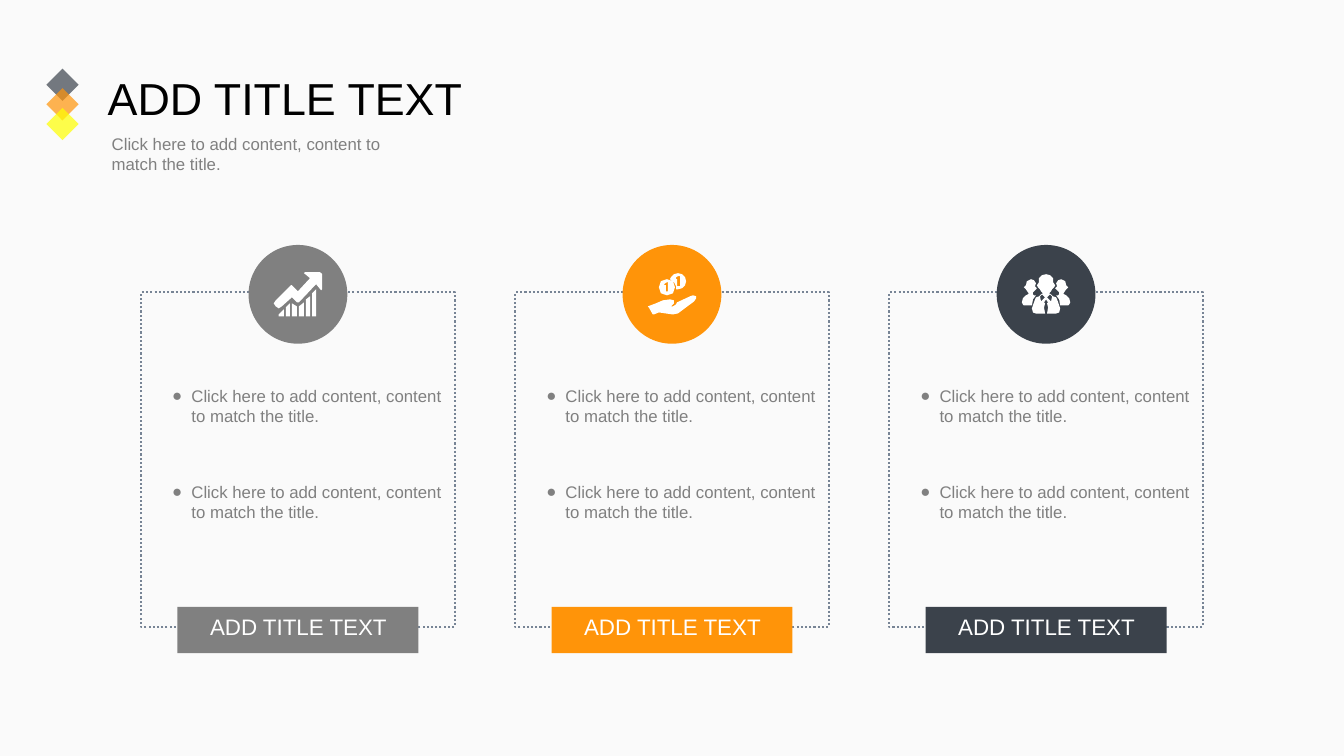
from lxml import etree
from pptx import Presentation
from pptx.dml.color import RGBColor
from pptx.enum.dml import MSO_LINE_DASH_STYLE as Dash
from pptx.enum.shapes import MSO_SHAPE as Preset
from pptx.enum.text import MSO_AUTO_SIZE as AutoSize, PP_ALIGN as Align
from pptx.oxml.ns import qn
from pptx.util import Inches, Pt

COLORS = {"background": "FAFAFA", "gray": "808080", "orange": "FF9409", "slate": "3B424B",
          "yellow": "FFFF00", "border": "778495", "white": "FFFFFF", "black": "000000"}

# Content
TITLE = "ADD TITLE TEXT"
BODY = "Click here to add content, content to match the title."
DIAMONDS = ["slate", "orange", "yellow"]
FORMATS = {
    "title": {"size": Pt(32), "color": "black"},
    "body": {"size": Pt(12), "color": "gray"},
    "label": {"size": Pt(16), "color": "white"},
}


def mirror(points):
    return [(-x, y) for x, y in points]


# Icon outlines, in hundredths of an inch from the centre of their circle
GROWTH = [
    [(-19, 22), (-19, 20), (-14, 15), (-14, 22)],
    [(-12, 22), (-12, 13), (-8, 9), (-8, 22)],
    [(-6, 22), (-6, 9), (-1, 12), (-1, 22)],
    [(1, 22), (1, 12), (6, 8), (6, 22)],
    [(8, 22), (8, 5), (12, 1.5), (12, 22)],
    [(14, 22), (14, -1), (18, -5), (18, 22)],
    [(7, -22), (22, -22), (24.5, -20), (24.5, -5), (23, -4), (18, -10), (1, 8), (-1, 8),
     (-6, 3), (-16, 12), (-19, 13.5), (-22, 12), (-24, 9), (-22, 6), (-7, -9), (-6, -9),
     (0, -3), (12, -16), (6, -21)],
]
COINS = [
    [(21, 1), (24, 2), (24.5, 4.5), (22, 7), (6, 19), (1, 20.5), (-13, 18), (-18, 20),
     (-19, 20), (-23, 13), (-24, 12), (-16, 9), (-9, 5.5), (-2, 5), (2, 6), (2, 9),
     (-1, 11.5), (-5, 12), (1, 12), (4, 10), (5, 8), (18, 2)],
    [(-5, -15), (-2, -14.4), (0.7, -12.7), (2.4, -10), (3, -7), (2.4, -4), (0.7, -1.3),
     (-2, 0.4), (-5, 1), (-8, 0.4), (-10.7, -1.3), (-12.4, -4), (-13, -7), (-12.4, -10),
     (-10.7, -12.7), (-8, -14.4)],
    [(-5, -12), (-8, -10), (-7, -9), (-6, -9), (-6, -3), (-4, -3), (-4, -12)],
    [(4, -5), (6, -5), (10, -6), (13, -9), (14, -13), (13, -17), (10, -20), (6, -21),
     (2, -20), (-1, -17), (-2, -15), (2, -12), (4, -8)],
    [(6, -18), (4, -17), (4, -15), (5, -15), (5, -8), (8, -8), (8, -18)],
]
COLLEAGUE = [(15, -15), (19, -13), (20, -9), (21.5, -7), (20, -5), (18, -2), (17, -1), (18, 0),
             (20, 1), (23, 4), (24, 8), (23, 10), (22, 11), (14, 11), (13, 5), (10, 1),
             (12, 1), (13, 0), (13, -2), (10, -5), (9, -6), (11, -8), (10, -11), (12, -14)]
LEADER_HALF = [(0, -20), (4, -19), (7, -16), (7, -12), (9, -9), (8, -7), (6, -5), (5, -3),
               (3, -1), (5, 0), (7, 2), (10, 3), (11, 5), (14, 14), (13, 18), (10, 19),
               (1, 19), (2, 13), (1, 9), (2, 8), (0, 5)]
COLLAR = [(4, 0), (1, 3), (5, 7), (6, 2)]
TEAM = [COLLEAGUE, mirror(COLLEAGUE), LEADER_HALF + mirror(LEADER_HALF)[::-1],
        COLLAR, mirror(COLLAR)]

CARDS = [("gray", GROWTH), ("orange", COINS), ("slate", TEAM)]

# Layout
CARD_LEFT, CARD_TOP, CARD_STEP = 1.4, 2.9, 3.71
CARD_WIDTH, CARD_HEIGHT = 3.11, 3.32
CIRCLE_SIZE, CIRCLE_MIDDLE = 0.98, 2.92
BULLET_TOPS = [3.78, 4.73]


def rgb(name):
    return RGBColor.from_string(COLORS[name])


def paint(shape, fill, alpha=None):
    shape.shadow.inherit = False
    shape.line.fill.background()
    shape.fill.solid()
    shape.fill.fore_color.rgb = rgb(fill)
    if alpha:
        color = shape.fill._xPr.find(qn("a:solidFill"))[0]
        etree.SubElement(color, qn("a:alpha"), val=str(alpha * 1000))


def add_filled(shapes, preset, box, fill, alpha=None):
    shape = shapes.add_shape(preset, *map(Inches, box))
    paint(shape, fill, alpha)


def add_text(shapes, box, text, style, align=Align.LEFT, bullet=False):
    frame = shapes.add_textbox(*map(Inches, box)).text_frame
    frame.word_wrap = True
    frame.auto_size = AutoSize.SHAPE_TO_FIT_TEXT
    paragraph = frame.paragraphs[0]
    paragraph.alignment = align
    run = paragraph.add_run()
    run.text = text
    run.font.name = "Arial"
    for key, value in FORMATS[style].items():
        if key == "color":
            run.font.color.rgb = rgb(value)
        else:
            setattr(run.font, key, value)
    if bullet:
        properties = paragraph._p.get_or_add_pPr()
        properties.set("marL", str(Inches(0.19)))
        properties.set("indent", str(-Inches(0.19)))
        etree.SubElement(properties, qn("a:buFont"), typeface="Arial")
        etree.SubElement(properties, qn("a:buChar"), char="●")


def add_icon(shapes, center, contours):
    builder = None
    for points in contours:
        if builder is None:
            builder = shapes.build_freeform(*points[0], scale=Inches(0.01))
        else:
            builder.move_to(*points[0])
        builder.add_line_segments(points[1:], close=True)
    paint(builder.convert_to_shape(*map(Inches, center)), "white")


def add_card(shapes, left, color, icon):
    # Dotted frame
    frame = shapes.add_shape(Preset.RECTANGLE, *map(
        Inches, (left, CARD_TOP, CARD_WIDTH, CARD_HEIGHT)))
    frame.shadow.inherit = False
    frame.fill.background()
    frame.line.color.rgb = rgb("border")
    frame.line.width = Pt(1.5)
    frame.line.dash_style = Dash.ROUND_DOT

    # Bar with its label
    add_filled(shapes, Preset.RECTANGLE, (left + 0.36, 6.02, 2.39, 0.46), color)
    add_text(shapes, (left + 0.55, 6.03, 2.02, 0.37), TITLE, "label", Align.CENTER)

    # Circle with its icon
    middle = left + CARD_WIDTH / 2
    radius = CIRCLE_SIZE / 2
    add_filled(shapes, Preset.OVAL,
               (middle - radius, CIRCLE_MIDDLE - radius, CIRCLE_SIZE, CIRCLE_SIZE), color)
    add_icon(shapes, (middle, CIRCLE_MIDDLE), icon)

    # Bullets
    for top in BULLET_TOPS:
        add_text(shapes, (left + 0.21, top, 2.88, 0.5), BODY, "body", bullet=True)


def main():
    presentation = Presentation()
    presentation.slide_width, presentation.slide_height = Inches(13.33), Inches(7.5)
    slide = presentation.slides.add_slide(presentation.slide_layouts[6])
    slide.background.fill.solid()
    slide.background.fill.fore_color.rgb = rgb("background")

    # Cards
    for index, (color, icon) in enumerate(CARDS):
        add_card(slide.shapes, CARD_LEFT + index * CARD_STEP, color, icon)

    # Heading
    heading = slide.shapes.add_group_shape().shapes
    add_text(heading, (1.01, 1.28, 3.16, 0.5), BODY, "body")
    add_text(heading, (0.97, 0.65, 3.73, 0.64), TITLE, "title")

    # Overlapping diamonds
    diamonds = slide.shapes.add_group_shape().shapes
    for index, color in enumerate(DIAMONDS):
        add_filled(diamonds, Preset.DIAMOND, (0.46, 0.68 + index * 0.195, 0.32, 0.32), color, 70)

    presentation.save("out.pptx")


if __name__ == "__main__":
    main()
